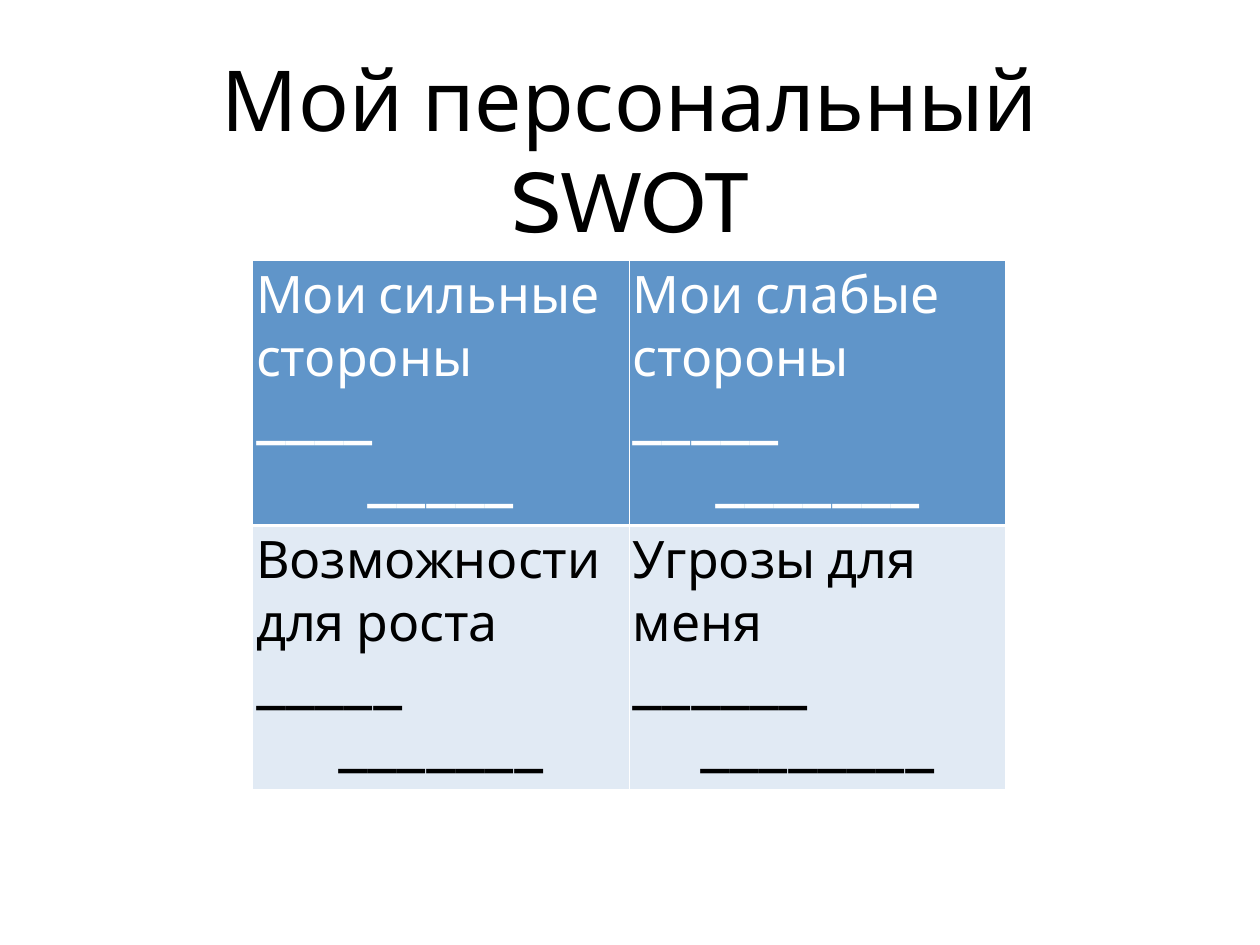
from dataclasses import dataclass

from lxml import etree
from pptx import Presentation
from pptx.dml.color import RGBColor
from pptx.enum.text import MSO_ANCHOR, MSO_AUTO_SIZE, PP_ALIGN
from pptx.oxml.ns import qn
from pptx.util import Inches, Pt

LEFT, CENTER = PP_ALIGN.LEFT, PP_ALIGN.CENTER
MIDDLE, TOP = MSO_ANCHOR.MIDDLE, MSO_ANCHOR.TOP
NO_FIT = MSO_AUTO_SIZE.NONE

FONT = "Cabin"
COLORS = {"black": "000000", "white": "FFFFFF", "header": "6095C9", "body": "E1EAF4"}
TITLE_ONLY = 5
COL_WIDTH, ROW_HEIGHT = 4.25, 2.99
CELL_MARGIN, TITLE_MARGIN = 0.04, 0.06
THIN, THICK = 1, 3


@dataclass(frozen=True)
class Quadrant:
    heading: str
    first_blank: int
    second_blank: int


@dataclass(frozen=True)
class RowStyle:
    fill: str
    text: str
    top: int
    bottom: int


QUADRANTS = [
    [Quadrant("Мои сильные стороны", 4, 5), Quadrant("Мои слабые стороны", 5, 7)],
    [Quadrant("Возможности для роста", 5, 7), Quadrant("Угрозы для меня", 6, 8)],
]
ROW_STYLES = [
    RowStyle("header", "white", THIN, THICK),
    RowStyle("body", "black", THICK, THIN),
]


def write(p, text: str, *, size: float, color: str, align=LEFT) -> None:
    p.alignment = align
    r = p.add_run()
    r.text = text
    r.font.name = FONT
    r.font.size = Pt(size)
    r.font.bold = False
    r.font.color.rgb = RGBColor.from_string(COLORS[color])


def set_margins(target, margin: float) -> None:
    """Give a cell or text frame the same inset on all four sides."""
    for side in ("left", "top", "right", "bottom"):
        setattr(target, f"margin_{side}", Inches(margin))


def set_borders(cell, style: RowStyle) -> None:
    tc_pr = cell._tc.get_or_add_tcPr()
    widths = {"lnL": THIN, "lnR": THIN, "lnT": style.top, "lnB": style.bottom}
    for i, (tag, width) in enumerate(widths.items()):
        ln = etree.Element(qn(f"a:{tag}"), w=str(Pt(width)))
        fill = etree.SubElement(ln, qn("a:solidFill"))
        etree.SubElement(fill, qn("a:srgbClr"), val=COLORS["white"])
        tc_pr.insert(i, ln)


def fill_cell(cell, quadrant: Quadrant, style: RowStyle) -> None:
    set_margins(cell, CELL_MARGIN)
    cell.vertical_anchor = TOP
    cell.fill.solid()
    cell.fill.fore_color.rgb = RGBColor.from_string(COLORS[style.fill])
    set_borders(cell, style)
    lines = [
        (quadrant.heading, LEFT),
        ("_" * quadrant.first_blank, LEFT),
        ("_" * quadrant.second_blank, CENTER),
    ]
    tf = cell.text_frame
    for i, (text, align) in enumerate(lines):
        p = tf.add_paragraph() if i else tf.paragraphs[0]
        write(p, text, size=42, color=style.text, align=align)


def add_title(s, text: str) -> None:
    sp = s.shapes.title
    sp.left, sp.top = Inches(1.04), Inches(0.49)
    sp.width, sp.height = Inches(12.14), Inches(2.36)
    tf = sp.text_frame
    tf.word_wrap = True
    tf.auto_size = NO_FIT
    tf.vertical_anchor = MIDDLE
    set_margins(tf, TITLE_MARGIN)
    write(tf.paragraphs[0], text, size=68.4, color="black", align=CENTER)


def add_swot_table(s) -> None:
    rows, cols = len(QUADRANTS), len(QUADRANTS[0])
    table = s.shapes.add_table(
        rows, cols, Inches(2.85), Inches(2.94),
        Inches(cols * COL_WIDTH), Inches(rows * ROW_HEIGHT),
    ).table
    for i, (quadrants, style) in enumerate(zip(QUADRANTS, ROW_STYLES)):
        for j, quadrant in enumerate(quadrants):
            fill_cell(table.cell(i, j), quadrant, style)


def main() -> None:
    prs = Presentation()
    prs.slide_width, prs.slide_height = Inches(14.22), Inches(10.67)
    s = prs.slides.add_slide(prs.slide_layouts[TITLE_ONLY])
    add_title(s, "Мой персональный SWOT")
    add_swot_table(s)
    prs.save("out.pptx")


if __name__ == "__main__":
    main()
